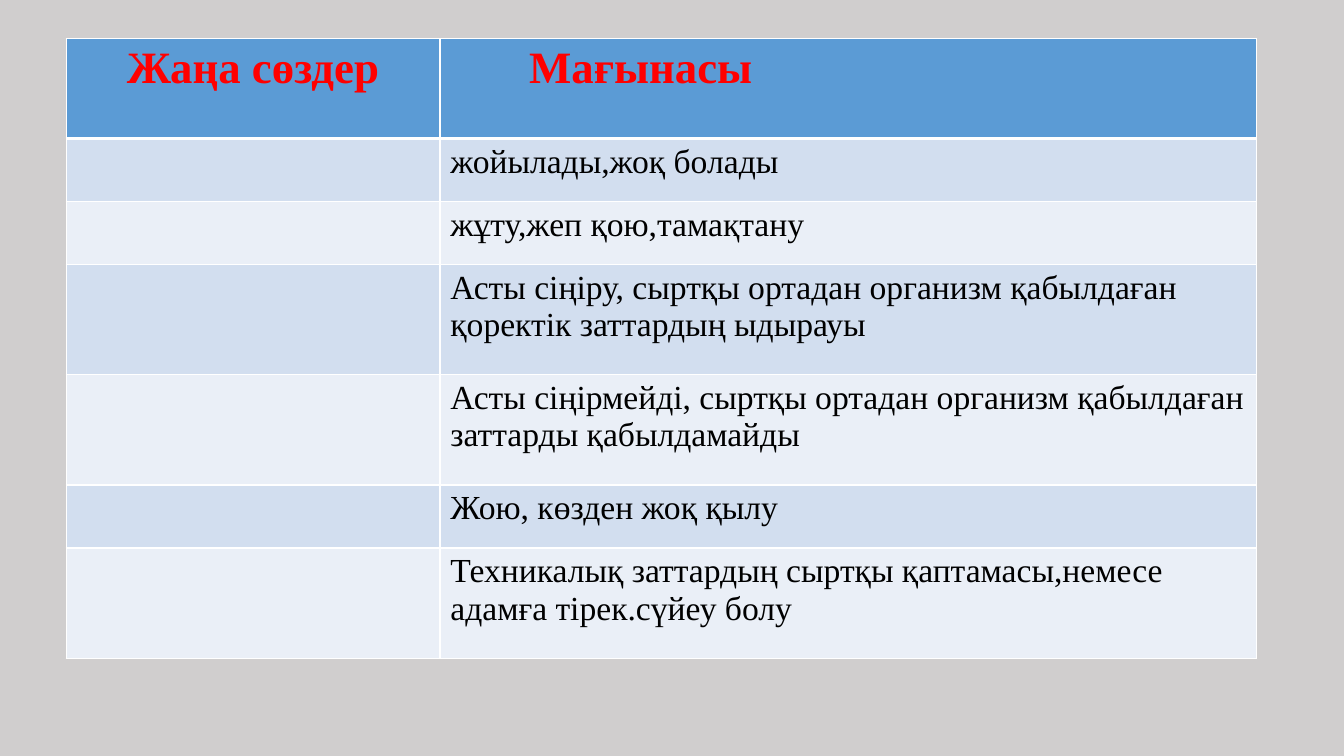
import pptx
import pptx.dml.color
import pptx.enum.text
import pptx.oxml
import pptx.oxml.ns
import pptx.util

EMU_PER_PX = 9525
SLIDE_SIZE = (1280, 720)
TABLE_BOX = (63, 37, 1134, 590)
WORD_COLUMN = 356
HEADER_HEIGHT = 95
ROW_HEIGHTS = {1: 60, 2: 105}  # by number of text lines
CELL_MARGIN = 10
MEANING_INDENT = 75

HEADINGS = ("Жаңа сөздер", "Мағынасы")
MEANINGS = [
    ("жойылады,жоқ болады", 1),
    ("жұту,жеп қою,тамақтану", 1),
    ("Асты сіңіру, сыртқы ортадан организм қабылдаған қоректік заттардың ыдырауы", 2),
    ("Асты сіңірмейді, сыртқы ортадан организм қабылдаған заттарды қабылдамайды", 2),
    ("Жою, көзден жоқ қылу", 1),
    ("Техникалық заттардың сыртқы қаптамасы,немесе адамға тірек.сүйеу болу", 2),
]
BAND_FILLS = ("D2DEEF", "EAEFF7")
HEADER_FORMAT = {"size": pptx.util.Pt(32), "bold": True}
BODY_FORMAT = {"size": pptx.util.Pt(24), "bold": False}


def px(length):
    return pptx.util.Emu(length * EMU_PER_PX)


def color(hex_string):
    return pptx.dml.color.RGBColor.from_string(hex_string)


def paint(fill, hex_string):
    fill.solid()
    fill.fore_color.rgb = color(hex_string)


def set_borders(cell, bottom_points):
    """Draw white lines on all four sides of a cell."""
    properties = cell._tc.get_or_add_tcPr()
    widths = {"lnL": 1, "lnR": 1, "lnT": 1, "lnB": bottom_points}
    for position, (side, points) in enumerate(widths.items()):
        line = pptx.oxml.parse_xml(
            f'<a:{side} {pptx.oxml.ns.nsdecls("a")} w="{pptx.util.Pt(points)}">'
            f'<a:solidFill><a:srgbClr val="FFFFFF"/></a:solidFill></a:{side}>')
        properties.insert(position, line)


def fill_cell(cell, text, fill, text_color, font_format, bottom_points=1):
    paint(cell.fill, fill)
    set_borders(cell, bottom_points)
    cell.margin_left = cell.margin_right = px(CELL_MARGIN)
    if text:
        cell.text = text
        font = cell.text_frame.paragraphs[0].runs[0].font
        font.name = "Times New Roman"
        font.color.rgb = color(text_color)
        for name, value in font_format.items():
            setattr(font, name, value)


def add_vocabulary_table(slide, box):
    left, top, width, height = box
    frame = slide.shapes.add_table(
        len(MEANINGS) + 1, 2, px(left), px(top), px(width), px(height))
    table = frame.table
    table.columns[0].width = px(WORD_COLUMN)
    table.columns[1].width = px(width - WORD_COLUMN)

    # Heading row
    table.rows[0].height = px(HEADER_HEIGHT)
    for column, heading in enumerate(HEADINGS):
        fill_cell(table.cell(0, column), heading, "5B9BD5", "FF0000", HEADER_FORMAT, 3)
    word_heading = table.cell(0, 0).text_frame.paragraphs[0]
    word_heading.alignment = pptx.enum.text.PP_ALIGN.CENTER
    table.cell(0, 1).margin_left = px(CELL_MARGIN + MEANING_INDENT)

    # Banded rows: an empty word cell beside each meaning
    for row, (meaning, lines) in enumerate(MEANINGS, start=1):
        table.rows[row].height = px(ROW_HEIGHTS[lines])
        for column, text in enumerate(("", meaning)):
            fill_cell(table.cell(row, column), text,
                      BAND_FILLS[(row - 1) % 2], "000000", BODY_FORMAT)


def main():
    presentation = pptx.Presentation()
    presentation.slide_width, presentation.slide_height = map(px, SLIDE_SIZE)
    slide = presentation.slides.add_slide(presentation.slide_layouts[6])
    paint(slide.background.fill, "D0CECE")
    add_vocabulary_table(slide, TABLE_BOX)
    presentation.save("out.pptx")


if __name__ == "__main__":
    main()
